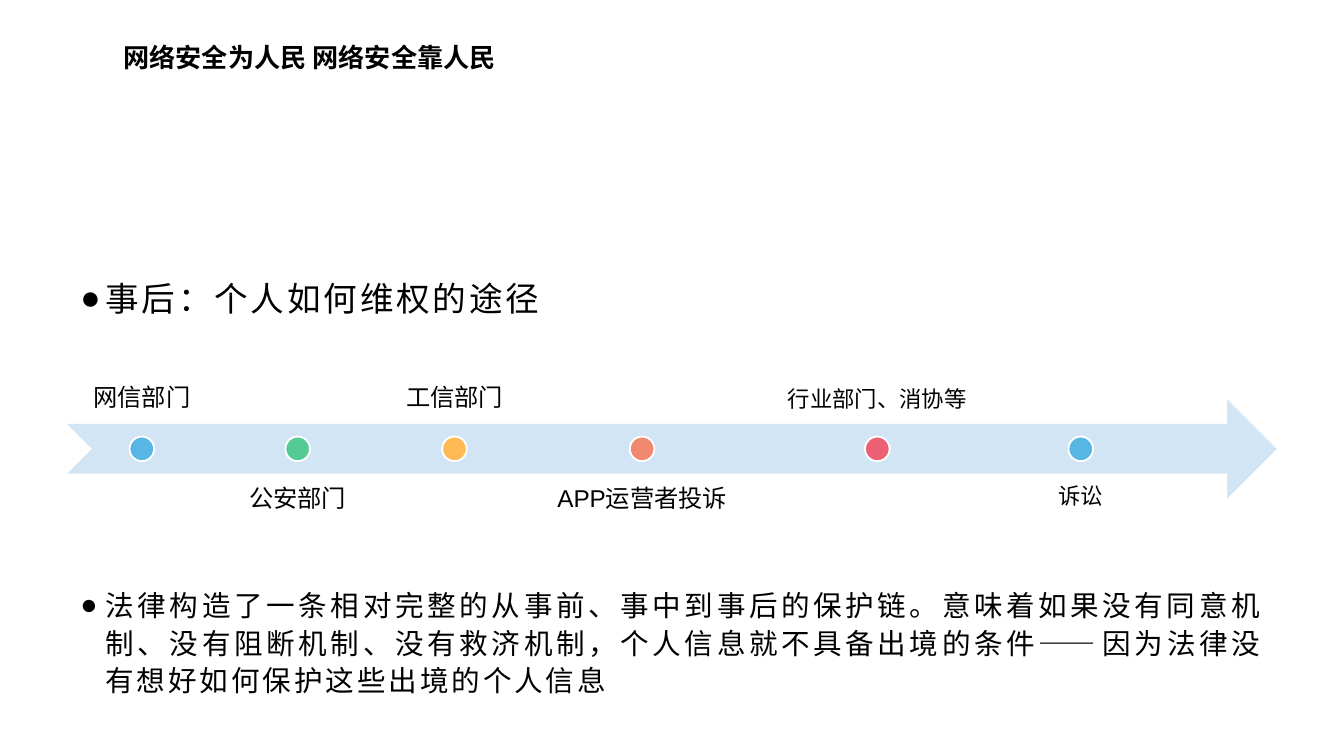
from dataclasses import dataclass

from lxml import etree
from pptx import Presentation
from pptx.dml.color import RGBColor
from pptx.enum import shapes, text
from pptx.oxml import ns
from pptx.util import Pt


@dataclass(frozen=True)
class Theme:
    ink: str = "000000"
    white: str = "FFFFFF"
    arrow: str = "D1E5F5"
    blue: str = "58B6E5"
    green: str = "56CA95"
    amber: str = "FFBA55"
    coral: str = "F18870"
    red: str = "EC5F74"
    chinese: str = "Noto Sans CJK SC"
    latin: str = "Arial"
    title: float = 14
    heading: float = 18
    body: float = 15.3
    label: float = 13
    small_label: float = 12


THEME = Theme()
DOT = 13.2
LABEL_HEIGHT = 53.3
AXIS = 240.5  # vertical centre of the timeline

# wording, dot centre, label width, colour, type size
STEPS = [
    ("网信部门", 76, 80, THEME.blue, THEME.label),
    ("公安部门", 159.5, 80, THEME.green, THEME.label),
    ("工信部门", 243.5, 80, THEME.amber, THEME.label),
    ("APP运营者投诉", 344, 114, THEME.coral, THEME.label),
    ("行业部门、消协等", 470, 130, THEME.red, THEME.small_label),
    ("诉讼", 579, 80, THEME.blue, THEME.small_label),
]


def apply(target, values):
    for name, value in values.items():
        setattr(target, name, value)


def add_text(slide, wording, box, size, font, inset=(7.2, 3.6), bold=False,
             frame_format=None, paragraph_format=None):
    """Add a one-paragraph text box; inset is (horizontal, vertical)."""
    frame = slide.shapes.add_textbox(*map(Pt, box)).text_frame
    across, down = map(Pt, inset)
    apply(frame, {"word_wrap": True, "margin_left": across, "margin_right": across,
                  "margin_top": down, "margin_bottom": down, **(frame_format or {})})
    paragraph = frame.paragraphs[0]
    apply(paragraph, paragraph_format or {})
    run = paragraph.add_run()
    run.text = wording
    apply(run.font, {"size": Pt(size), "name": font, "bold": bold})
    run.font.color.rgb = RGBColor.from_string(THEME.ink)
    east_asian = etree.SubElement(run.font._element, ns.qn("a:ea"))
    east_asian.set("typeface", THEME.chinese)
    return paragraph


def add_bullet_text(slide, wording, top, size, spacing):
    """Add a justified, letter-spaced paragraph with a hanging bullet."""
    paragraph = add_text(
        slide, wording, (36, top, 648, 67.5), size, THEME.chinese,
        paragraph_format={"alignment": text.PP_ALIGN.JUSTIFY,
                          "line_spacing": spacing, "space_after": Pt(10)})
    properties = paragraph._p.get_or_add_pPr()
    properties.set("marL", str(Pt(13.5)))
    properties.set("indent", str(-Pt(13.5)))
    etree.SubElement(properties, ns.qn("a:buFont")).set("typeface", THEME.latin)
    etree.SubElement(properties, ns.qn("a:buChar")).set("char", "●")
    paragraph.runs[0].font._element.set("spc", "150")


def add_filled_shape(slide, kind, box, fill, outline=None):
    shape = slide.shapes.add_shape(kind, *map(Pt, box))
    shape.shadow.inherit = False
    shape.fill.solid()
    shape.fill.fore_color.rgb = RGBColor.from_string(fill)
    if outline:
        shape.line.color.rgb = RGBColor.from_string(outline)
        shape.line.width = Pt(1)
    else:
        shape.line.fill.background()


def add_step(slide, index, wording, centre, width, colour, size):
    """Add a dot on the axis with its label, alternately above and below."""
    above = index % 2 == 0
    top = 174.2 if above else 253.5
    inset = 7.2 if size == THEME.label else 6.5
    anchor = text.MSO_ANCHOR.BOTTOM if above else text.MSO_ANCHOR.TOP
    add_text(slide, wording, (centre - width / 2, top, width, LABEL_HEIGHT),
             size, THEME.latin, inset=(inset, inset),
             frame_format={"vertical_anchor": anchor},
             paragraph_format={"alignment": text.PP_ALIGN.CENTER,
                               "line_spacing": 0.9})
    add_filled_shape(slide, shapes.MSO_SHAPE.OVAL,
                     (centre - DOT / 2, AXIS - DOT / 2, DOT, DOT),
                     colour, THEME.white)


def main():
    deck = Presentation()
    apply(deck, {"slide_width": Pt(720), "slide_height": Pt(405)})
    slide = deck.slides.add_slide(deck.slide_layouts[6])

    add_text(slide, "网络安全为人民 网络安全靠人民", (59, 18.7, 345, 24.5),
             THEME.title, THEME.chinese, bold=True,
             frame_format={"auto_size": text.MSO_AUTO_SIZE.SHAPE_TO_FIT_TEXT})
    add_bullet_text(slide, "事后：个人如何维权的途径", 139, THEME.heading, 1.3)

    add_filled_shape(slide, shapes.MSO_SHAPE.NOTCHED_RIGHT_ARROW,
                     (36, AXIS - 26.65, 648, 53.3), THEME.arrow)
    for index, step in enumerate(STEPS):
        add_step(slide, index, *step)

    add_bullet_text(
        slide,
        "法律构造了一条相对完整的从事前、事中到事后的保护链。"
        "意味着如果没有同意机制、没有阻断机制、没有救济机制，"
        "个人信息就不具备出境的条件——因为法律没有想好如何保护这些出境的个人信息",
        309.6, THEME.body, 1.1)
    deck.save("out.pptx")


if __name__ == "__main__":
    main()
